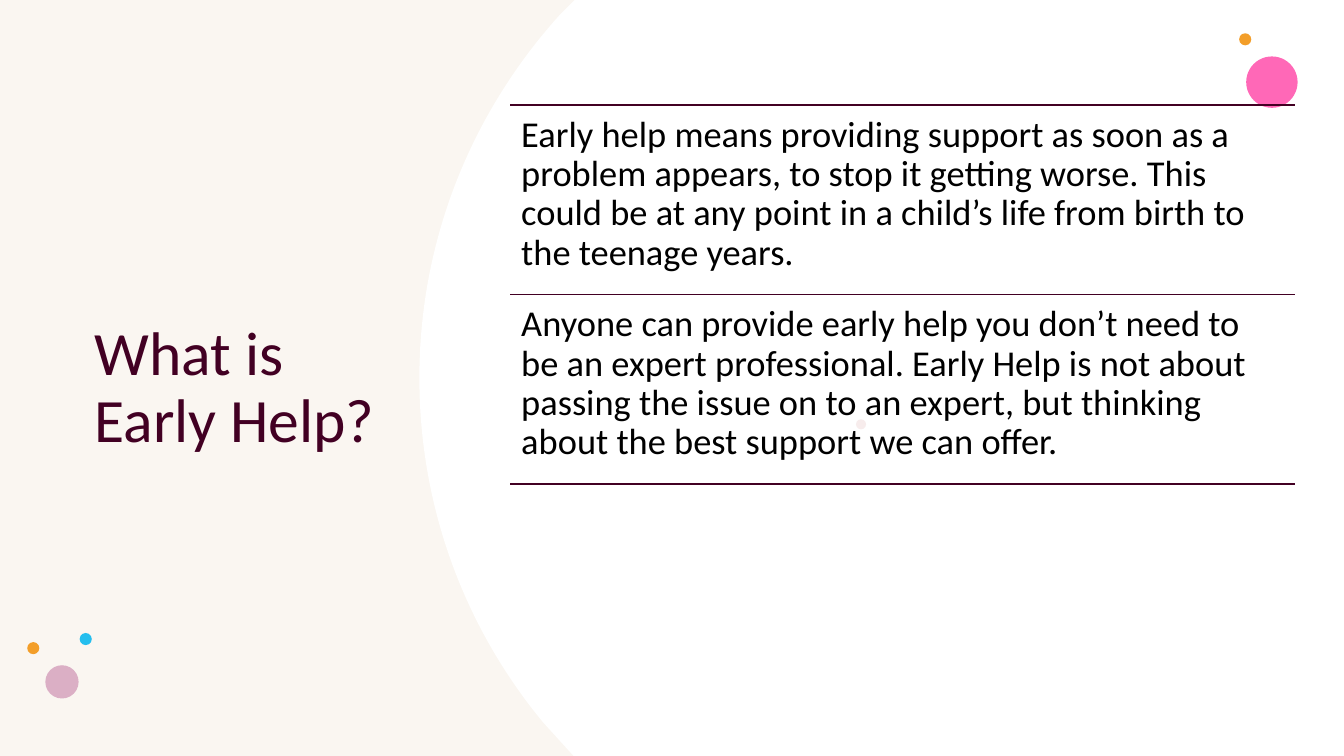
from typing import NamedTuple

from lxml import etree
from pptx import Presentation
from pptx.dml.color import RGBColor
from pptx.enum.shapes import MSO_CONNECTOR, MSO_SHAPE
from pptx.enum.text import MSO_ANCHOR
from pptx.oxml.ns import qn
from pptx.util import Emu, Pt

PX = 9144  # EMU per px, 100 px to the inch
WIDTH, HEIGHT = 1333, 750
FONT = "Calibri"
COLORS = {
    "white": "FFFFFF",
    "sand": "F0E2D3",
    "pink": "FF2F9C",
    "orange": "F39E29",
    "blush": "E3BEBE",
    "blue": "24BEEE",
    "mauve": "DBAFC5",
    "plum": "420023",
    "black": "000000",
}

Point = tuple[float, float]


class Dot(NamedTuple):
    left: int
    top: int
    size: int
    color: str
    opacity: int = 100


class Curve(NamedTuple):
    """A cubic Bezier: start, two control points and end."""
    start: Point
    control1: Point
    control2: Point
    end: Point


DOTS = [
    Dot(1236, 56, 51, "pink", 72),
    Dot(1229, 33, 12, "orange"),
    Dot(849, 416, 10, "blush", 28),
    Dot(79, 628, 12, "blue"),
    Dot(45, 660, 33, "mauve"),
    Dot(27, 637, 12, "orange"),
]
ARC = [
    Curve((539, 717), (462, 624), (416, 505), (416, 375)),
    Curve((416, 375), (416, 236), (469, 110), (556, 14)),
]
STATEMENTS = [
    "Early help means providing support as soon as a problem appears, to stop "
    "it getting worse. This could be at any point in a child’s life from birth "
    "to the teenage years.",
    "Anyone can provide early help you don’t need to be an expert professional. "
    "Early Help is not about passing the issue on to an expert, but thinking "
    "about the best support we can offer.",
]
LIST_LEFT, LIST_TOP, LIST_WIDTH, ROW_HEIGHT = 506, 104, 778, 188


def px(value: float) -> Emu:
    return Emu(round(value * PX))


def rgb(name: str) -> RGBColor:
    return RGBColor.from_string(COLORS[name])


def paint(sp, color: str, opacity: int = 100) -> None:
    sp.shadow.inherit = False
    sp.line.fill.background()
    sp.fill.solid()
    sp.fill.fore_color.rgb = rgb(color)
    if opacity < 100:
        clr = sp.fill._xPr.find(qn("a:solidFill"))[0]
        etree.SubElement(clr, qn("a:alpha"), val=str(opacity * 1000))


def add_preset(shapes, kind: MSO_SHAPE, left: int, top: int, width: int,
               height: int, color: str, opacity: int = 100) -> None:
    sp = shapes.add_shape(kind, px(left), px(top), px(width), px(height))
    paint(sp, color, opacity)


def sample(curve: Curve, steps: int = 40) -> list[Point]:
    """Return points along the curve, without its start."""
    points = []
    for i in range(1, steps + 1):
        t = i / steps
        u = 1 - t
        weights = (u ** 3, 3 * u * u * t, 3 * u * t * t, t ** 3)
        points.append(tuple(sum(w * p[axis] for w, p in zip(weights, curve))
                            for axis in (0, 1)))
    return points


def add_white_panel(shapes) -> None:
    points = [(570, 0), (WIDTH, 0), (WIDTH, HEIGHT), (569, HEIGHT), ARC[0].start]
    for curve in ARC:
        points += sample(curve)
    start, *rest = [(px(x), px(y)) for x, y in points]
    builder = shapes.build_freeform(*start)
    builder.add_line_segments(rest, close=True)
    paint(builder.convert_to_shape(), "white")


def add_text(shapes, text: str, left: int, top: int, width: int, height: int, *,
             size: int, color: str, anchor: MSO_ANCHOR = MSO_ANCHOR.TOP,
             inset_x: int = 11, inset_y: int = 11) -> None:
    tf = shapes.add_textbox(px(left), px(top), px(width), px(height)).text_frame
    tf.word_wrap = True
    tf.vertical_anchor = anchor
    tf.margin_left = tf.margin_right = px(inset_x)
    tf.margin_top = tf.margin_bottom = px(inset_y)
    p = tf.paragraphs[0]
    p.line_spacing = 0.9
    r = p.add_run()
    r.text = text
    r.font.name = FONT
    r.font.size = Pt(size)
    r.font.color.rgb = rgb(color)


def add_rule(shapes, top: int) -> None:
    line = shapes.add_connector(MSO_CONNECTOR.STRAIGHT, px(LIST_LEFT), px(top),
                                px(LIST_LEFT + LIST_WIDTH), px(top))
    line.line.color.rgb = rgb("plum")
    line.line.width = Pt(1)
    etree.SubElement(line._element.spPr, qn("a:effectLst"))


def main() -> None:
    prs = Presentation()
    prs.slide_width, prs.slide_height = px(WIDTH), px(HEIGHT)
    shapes = prs.slides.add_slide(prs.slide_layouts[6]).shapes

    add_preset(shapes, MSO_SHAPE.RECTANGLE, 0, 0, WIDTH, HEIGHT, "sand", 30)
    add_white_panel(shapes)
    for dot in DOTS:
        add_preset(shapes, MSO_SHAPE.OVAL, dot.left, dot.top, dot.size, dot.size,
                   dot.color, dot.opacity)

    add_text(shapes, "What is Early Help?", 84, 104, 313, 564, size=44,
             color="plum", anchor=MSO_ANCHOR.MIDDLE, inset_x=10, inset_y=5)
    for row, statement in enumerate(STATEMENTS):
        top = LIST_TOP + row * ROW_HEIGHT
        add_rule(shapes, top)
        add_text(shapes, statement, LIST_LEFT, top, LIST_WIDTH, ROW_HEIGHT,
                 size=26, color="black")
    add_rule(shapes, LIST_TOP + len(STATEMENTS) * ROW_HEIGHT)

    prs.save("out.pptx")


if __name__ == "__main__":
    main()
